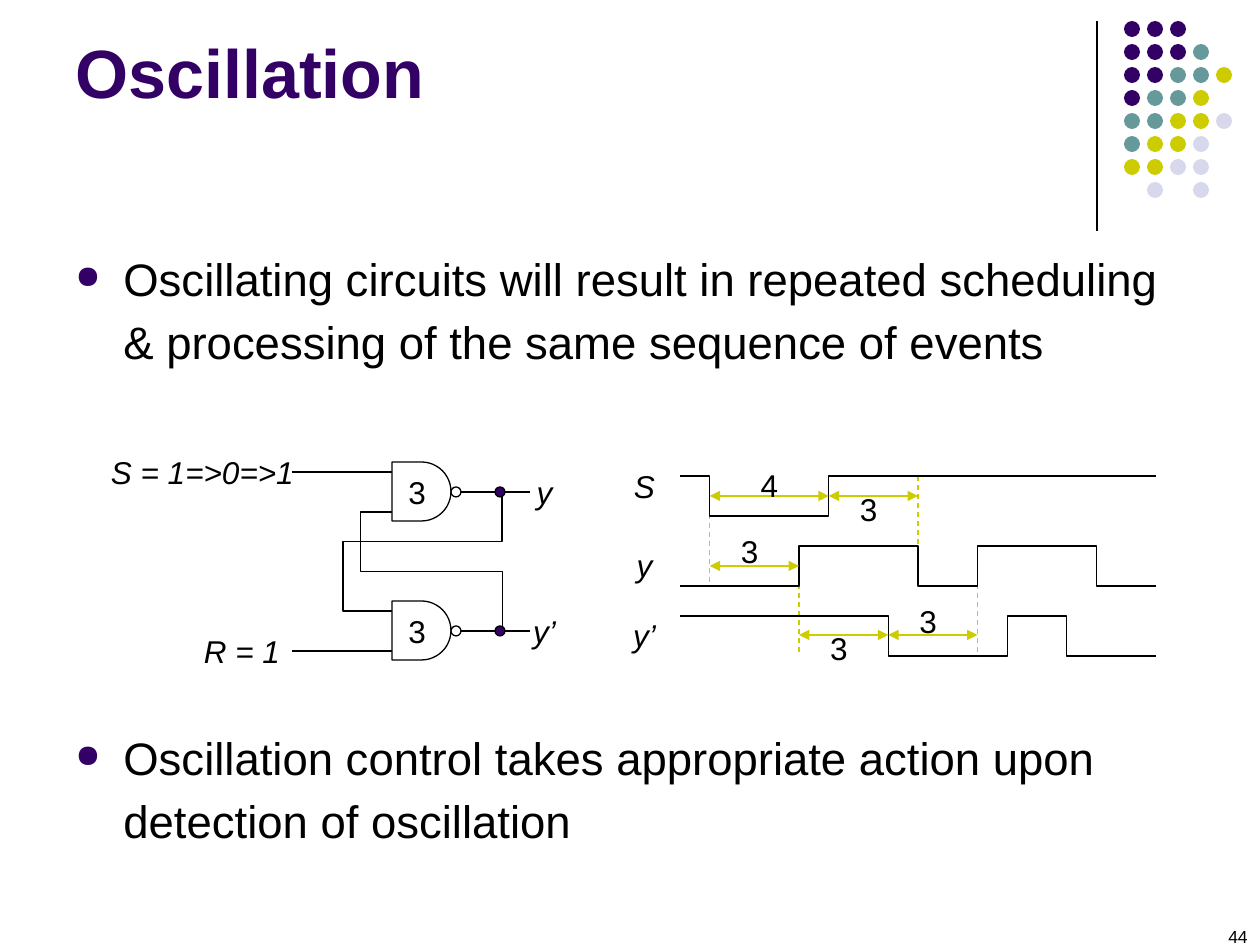
import pptx
import pptx.util
import pptx.dml.color
import pptx.enum.dml
import pptx.enum.shapes
import pptx.enum.text
import pptx.oxml
import pptx.oxml.ns

PX = 914400 / 126
HUES = {"ink": "000000", "paper": "FFFFFF", "plum": "330066",
        "teal": "669999", "lime": "CCCC00", "mist": "D8D8EC"}
FORM = pptx.enum.shapes.MSO_SHAPE
LINK = pptx.enum.shapes.MSO_CONNECTOR
SIDE = pptx.enum.text.PP_ALIGN
EDGE = pptx.enum.text.MSO_ANCHOR


def emu(*px):
    """Turn px lengths into EMU."""
    return [pptx.util.Emu(round(v * PX)) for v in px]


def rgb(name):
    """Look up a named colour."""
    return pptx.dml.color.RGBColor.from_string(HUES[name])


def add(parent, tag, **attrs):
    """Append a drawing element with the given attributes."""
    node = pptx.oxml.parse_xml(f"<a:{tag} {pptx.oxml.ns.nsdecls('a')}/>")
    for key, value in attrs.items():
        node.set(key, str(value))
    parent.append(node)
    return node


def style(para, size, color="ink", bold=False, italic=False):
    """Set the font of a paragraph."""
    font = para.font
    font.name, font.size = "Arial", pptx.util.Pt(size)
    font.bold, font.italic = bold, italic
    font.color.rgb = rgb(color)


def paint(item, fill=None, line=None):
    """Give a shape its fill and outline, without shadow."""
    item.shadow.inherit = False
    if fill:
        item.fill.solid()
        item.fill.fore_color.rgb = rgb(fill)
    else:
        item.fill.background()
    if line:
        item.line.color.rgb = rgb(line)
        item.line.width = pptx.util.Pt(0.75)
    else:
        item.line.fill.background()
    return item


def shape(parts, form, box, fill=None, line=None):
    """Add a preset shape."""
    return paint(parts.add_shape(form, *emu(*box)), fill, line)


def label(item, text, italic=False):
    """Centre one line of text in a shape or text box."""
    frame = item.text_frame
    frame.word_wrap = False
    frame.vertical_anchor = EDGE.MIDDLE
    para = frame.paragraphs[0]
    para.text, para.alignment = text, SIDE.CENTER
    style(para, 18, italic=italic)
    return item


def name(parts, box, text):
    """Add an italic signal name."""
    return label(shape(parts, FORM.FLOWCHART_PROCESS, box), text, True)


def wire(parts, start, end, color="ink", kind=LINK.STRAIGHT):
    """Add a thin connector between two points."""
    link = parts.add_connector(kind, *emu(*start, *end))
    link.line.color.rgb = rgb(color)
    link.line.width = pptx.util.Pt(0.75)
    add(link._element.spPr, "effectLst")
    return link


def bend(parts, start, end, preset, *turns):
    """Add an elbow connector with its turns in thousandths."""
    link = wire(parts, start, end, kind=LINK.ELBOW)
    geom = link._element.spPr.find(pptx.oxml.ns.qn("a:prstGeom"))
    geom.set("prst", preset)
    for old in list(geom):
        geom.remove(old)
    guides = add(geom, "avLst")
    for i, turn in enumerate(turns, 1):
        add(guides, "gd", name=f"adj{i}", fmla=f"val {turn * 100}")


def line(slide, box, text, size, color="ink", bold=False, align=SIDE.LEFT, top=6):
    """Add a text box with one paragraph."""
    frame = slide.shapes.add_textbox(*emu(*box)).text_frame
    frame.word_wrap = True
    frame.margin_top = emu(top)[0]
    para = frame.paragraphs[0]
    para.text, para.alignment = text, align
    style(para, size, color, bold)


def body(slide, box, items):
    """Add bulleted paragraphs, each with its space before."""
    frame = slide.shapes.add_textbox(*emu(*box)).text_frame
    frame.word_wrap = True
    for i, (text, gap) in enumerate(items):
        para = frame.add_paragraph() if i else frame.paragraphs[0]
        para.text, para.line_spacing = text, 1.15
        para.space_before = pptx.util.Pt(gap)
        props = para._p.get_or_add_pPr()
        inset = emu(48)[0]
        props.set("marL", str(inset))
        props.set("indent", str(-inset))
        add(add(props, "buClr"), "srgbClr", val=HUES["plum"])
        add(props, "buSzPct", val=70000)
        add(props, "buChar", char="●")
        style(para, 26)


def dots(slide, x, y):
    """Draw the corner dots and the rule beside them."""
    wire(slide.shapes, (x - 27, y), (x - 27, y + 210))
    parts = slide.shapes.add_group_shape().shapes
    key = {"P": "plum", "T": "teal", "Y": "lime", "L": "mist"}
    rows = ["PPP", "PPPT", "PPTTY", "PTTY", "TTYYL", "TYYL", "YYLL", " L L"]
    for r, row in enumerate(rows):
        for c, mark in enumerate(row):
            if mark in key:
                shape(parts, FORM.OVAL, (x + 23 * c, y + 23 * r, 16, 16), key[mark])


def gate(parts, x, y):
    """Draw a NAND gate with its pins, from its body's corner."""
    for dy in (10, 50):
        wire(parts, (x + 20, y + dy), (x - 20, y + dy))
    wire(parts, (x + 79, y + 30), (x + 40, y + 30))
    label(shape(parts, FORM.FLOWCHART_DELAY, (x, y, 59, 59), "paper", "ink"), "3")
    shape(parts, FORM.OVAL, (x + 59, y + 25, 10, 10), "paper", "ink")


def latch(slide, x, y):
    """Draw the cross-coupled gates with their signals."""
    parts = slide.shapes.add_group_shape().shapes
    pin, out = x + 259, x + 358
    for dy in (10, 149):
        gate(parts, x + 279, y + dy)
    bend(parts, (out, y + 40), (x + 230, y + 129), "bentConnector4", -244, 554)
    bend(parts, (pin, y + 60), (out, y + 179), "bentConnector5", -119, 500, 1318)
    wire(parts, (x + 230, y + 129), (x + 230, y + 149))
    bend(parts, (pin, y + 159), (x + 230, y + 149), "bentConnector2")
    for text, left, dy in (("S = 1=>0=>1", 0, 20), ("R = 1", 79, 199)):
        item = name(parts, (x + left, y + dy - 20, 179 - left, 40), text)
        wire(parts, (x + 179, y + dy), (pin, y + dy)).begin_connect(item, 3)
    for text, dy in (("y", 40), ("y’", 179)):
        item = name(parts, (x + 417, y + dy - 20, 29, 40), text)
        wire(parts, (out, y + dy), (x + 417, y + dy)).end_connect(item, 1)
        shape(parts, FORM.FLOWCHART_CONNECTOR, (x + 382, y + dy - 5, 10, 10), "plum", "ink")


def waves(slide, x, y, w):
    """Draw the signals over sixteen time units, with their delays."""
    parts = slide.shapes.add_group_shape().shapes

    def at(time):
        return x + time * w / 16

    for time, top in ((4, 90), (10, 90), (8, 0), (1, 20)):
        dash = wire(parts, (at(time), y + top), (at(time), y + top + 89), "lime")
        dash.line.dash_style = pptx.enum.dml.MSO_LINE.DASH
    signals = (("S", 0, 1, (1, 5), -10), ("y", 70, 0, (4, 8, 10, 14), -1),
               ("y’", 140, 1, (7, 11, 13), -1))
    for text, top, high, flips, dy in signals:
        points = []
        for time in flips:
            points.append((at(time), y + top + 40 * (1 - high)))
            high = 1 - high
            points.append((at(time), y + top + 40 * (1 - high)))
        points.append((at(16), points[-1][1]))
        path = parts.build_freeform(*emu(x, points[0][1]))
        path.add_line_segments([emu(*point) for point in points], close=False)
        paint(path.convert_to_shape(), line="ink")
        name(parts, (x - 50, y + top + dy, 29, 40), text)
    delays = ((1, 5, 20, 0, -11), (1, 4, 90, -5, -15), (5, 8, 20, -5, 13),
              (4, 7, 159, -5, 13), (7, 10, 159, -5, -14))
    for start, end, top, dx, dy in delays:
        arrow = wire(parts, (at(start), y + top), (at(end), y + top), "lime")
        for tip in ("headEnd", "tailEnd"):
            add(arrow.line._get_or_add_ln(), tip, type="triangle")
        left = (at(start) + at(end)) / 2 + dx - 21
        note = parts.add_textbox(*emu(left, y + top + dy - 25, 42, 50))
        label(note, str(end - start))


def main():
    """Build the slide and save it."""
    deck = pptx.Presentation()
    deck.slide_width, deck.slide_height = emu(1260, 945)
    slide = deck.slides.add_slide(deck.slide_layouts[6])
    dots(slide, 1124, 21)
    line(slide, (966, 918, 294, 27), "44", 10, align=SIDE.RIGHT, top=8)
    body(slide, (63, 237, 1134, 607), (
        ("Oscillating circuits will result in repeated scheduling "
         "& processing of the same sequence of events", 0),
        ("Oscillation control takes appropriate action upon "
         "detection of oscillation", 202)))
    line(slide, (63, 16, 1040, 179), "Oscillation", 39, "plum", True, top=14)
    latch(slide, 113, 452)
    waves(slide, 680, 476, 476)
    deck.save("out.pptx")


if __name__ == "__main__":
    main()
